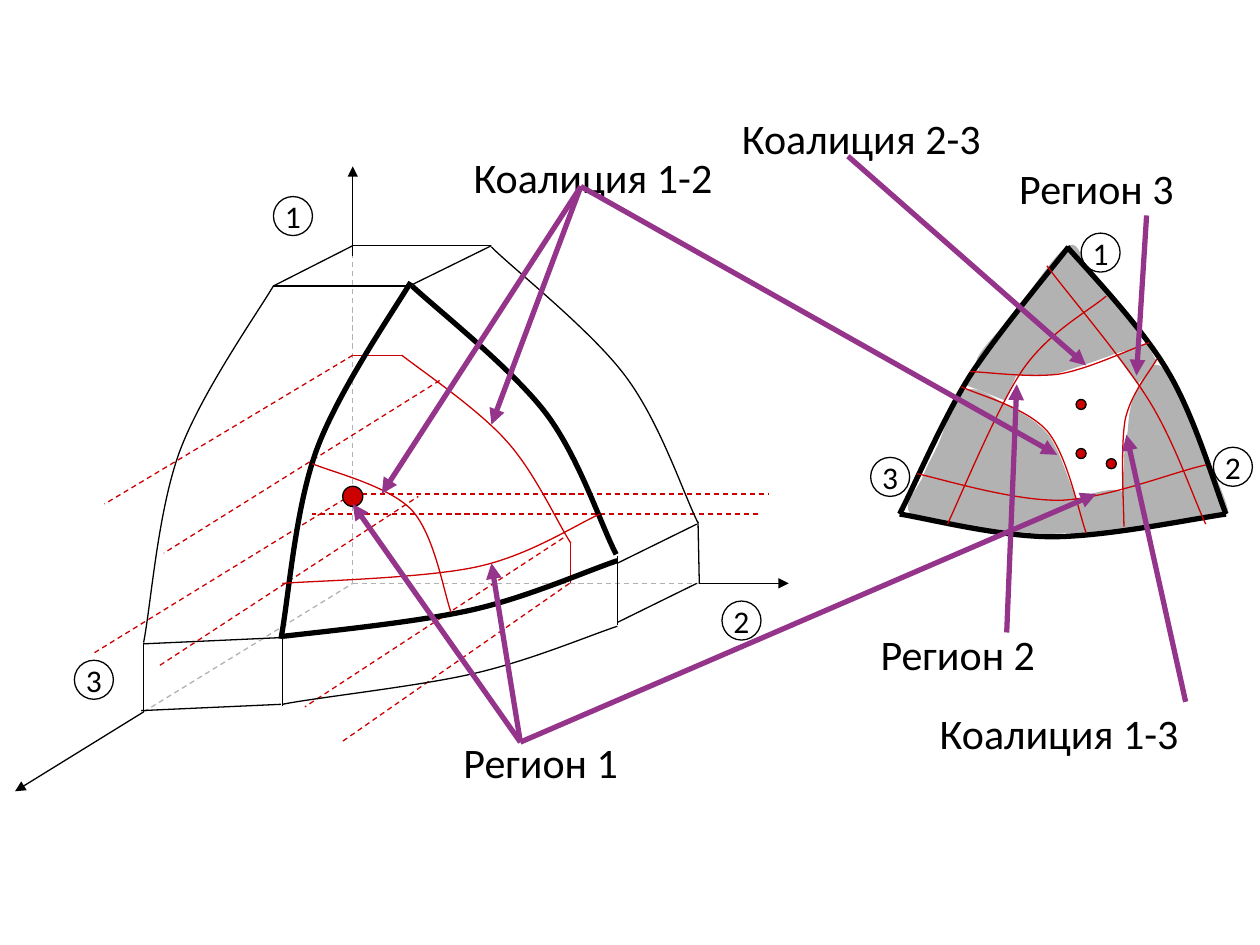
from lxml import etree
from pptx import Presentation
from pptx.dml.color import RGBColor
from pptx.enum.dml import MSO_LINE
from pptx.enum.shapes import MSO_CONNECTOR, MSO_SHAPE
from pptx.enum.text import MSO_ANCHOR, PP_ALIGN
from pptx.oxml.ns import qn
from pptx.util import Cm, Pt

DASH = MSO_LINE.DASH
STRAIGHT = MSO_CONNECTOR.STRAIGHT
OVAL = MSO_SHAPE.OVAL
MIDDLE = MSO_ANCHOR.MIDDLE
LEFT, CENTER = PP_ALIGN.LEFT, PP_ALIGN.CENTER
BLACK = RGBColor(0x00, 0x00, 0x00)
GRAY = RGBColor(0xB2, 0xB2, 0xB2)
RED = RGBColor(0xCC, 0x00, 0x00)
PURPLE = RGBColor(0x94, 0x34, 0x8B)
FONT = "Calibri"
THIN, THICK = 0.75, 3

FLAT_AREAS = [
    [(8.86, 2.82), (9.03, 3.05), (9.18, 2.87), (9.1, 2.72)],
    [(7.78, 2.92), (8.08, 2.95), (7.98, 3.18), (7.65, 3.05)],
]
ROUND_AREAS = [
    [(7.75, 2.9), (7.78, 2.98), (8.09, 2.98), (8.22, 2.98), (8.35, 2.99), (8.43, 2.95),
     (8.53, 2.92), (8.63, 2.89), (8.73, 2.85), (8.82, 2.82), (8.9, 2.78), (9.04, 2.78),
     (9.05, 2.72), (9.06, 2.66), (8.95, 2.54), (8.88, 2.45), (8.82, 2.36), (8.72, 2.27),
     (8.65, 2.18), (8.58, 2.1), (8.58, 1.9), (8.48, 1.95), (8.38, 2), (8.17, 2.33),
     (8.05, 2.48), (7.93, 2.64), (7.72, 2.82), (7.75, 2.9)],
    [(9.75, 4.07), (9.74, 3.96), (9.56, 3.59), (9.47, 3.4), (9.38, 3.21), (9.28, 2.94),
     (9.2, 2.9), (9.12, 2.86), (9.04, 3.06), (9, 3.15), (8.96, 3.24), (8.96, 3.33),
     (8.95, 3.42), (8.94, 3.51), (8.92, 3.56), (8.92, 3.68), (8.91, 3.81), (8.89, 4.09),
     (8.92, 4.17), (8.94, 4.25), (9.01, 4.17), (9.07, 4.17), (9.12, 4.17), (9.17, 4.18),
     (9.25, 4.17), (9.33, 4.16), (9.47, 4.12), (9.55, 4.1), (9.63, 4.08), (9.71, 4.07),
     (9.75, 4.07)],
    [(7.65, 3.1), (7.74, 3.05), (7.89, 3.16), (8, 3.22), (8.11, 3.28), (8.23, 3.34),
     (8.32, 3.45), (8.4, 3.56), (8.45, 3.72), (8.5, 3.85), (8.55, 3.98), (8.62, 4.15),
     (8.62, 4.22), (8.61, 4.28), (8.52, 4.23), (8.45, 4.23), (8.38, 4.24), (8.31, 4.24),
     (8.18, 4.23), (8.05, 4.22), (7.83, 4.2), (7.67, 4.17), (7.51, 4.14), (7.27, 4.13),
     (7.22, 4.07), (7.16, 4), (7.3, 3.86), (7.33, 3.77), (7.37, 3.67), (7.4, 3.63),
     (7.45, 3.52), (7.5, 3.41), (7.56, 3.15), (7.65, 3.1)],
    [(8.53, 3.98), (8.48, 4.04), (8.52, 4.2), (8.58, 4.23), (8.69, 4.22), (8.81, 4.21),
     (8.92, 4.2), (8.97, 4.15), (8.96, 3.94), (8.9, 3.9), (8.84, 3.86), (8.59, 3.93),
     (8.53, 3.98)],
]
AXES = [(2.8, 2.03, 2.8, 1.32), (1.14, 5.65, 0.12, 6.28), (5.55, 4.63, 6.26, 4.63)]
HIDDEN_AXES = [(1.14, 5.65, 2.8, 4.63), (2.8, 4.63, 5.55, 4.63), (2.8, 4.63, 2.8, 1.95)]
BODY_EDGES = [
    (3.27, 2.27, 2.17, 2.27), (2.24, 5.06, 1.14, 5.11), (2.17, 2.27, 2.8, 1.95),
    (3.27, 2.26, 3.9, 1.95), (2.8, 1.95, 3.9, 1.95), (1.14, 5.1, 1.14, 5.65),
    (2.24, 5.05, 2.24, 5.6), (2.23, 5.59, 1.12, 5.64), (4.9, 4.47, 5.53, 4.16),
    (5.54, 4.14, 5.55, 4.63), (4.9, 4.94, 5.53, 4.63), (4.9, 4.41, 4.9, 4.96),
]
BODY_CURVES = [
    [(2.17, 2.27), (2.04, 2.49), (1.59, 3.13), (1.42, 3.6), (1.25, 4.08), (1.2, 4.79), (1.14, 5.1)],
    [(3.9, 1.96), (4.07, 2.13), (4.69, 2.62), (4.96, 2.98), (5.24, 3.35), (5.42, 3.91), (5.54, 4.15)],
    [(2.24, 5.59), (2.48, 5.54), (3.3, 5.45), (3.74, 5.35), (4.19, 5.25), (4.66, 5.05), (4.9, 4.97)],
]
FRONT_CURVES = [
    [(3.26, 2.24), (3.13, 2.46), (2.68, 3.11), (2.51, 3.58), (2.34, 4.05), (2.29, 4.76), (2.23, 5.07)],
    [(3.27, 2.27), (3.45, 2.44), (4.07, 2.93), (4.34, 3.29), (4.6, 3.64), (4.77, 4.17), (4.89, 4.4)],
    [(2.25, 5.05), (2.5, 5.02), (3.31, 4.94), (3.75, 4.84), (4.19, 4.74), (4.66, 4.53), (4.9, 4.45)],
    [(8.48, 1.96), (8.35, 2.13), (7.93, 2.63), (7.7, 2.98), (7.48, 3.33), (7.26, 3.85), (7.14, 4.08)],
    [(8.47, 1.96), (8.61, 2.12), (9.06, 2.59), (9.27, 2.95), (9.48, 3.3), (9.64, 3.85), (9.73, 4.08)],
    [(7.14, 4.08), (7.34, 4.11), (7.92, 4.26), (8.35, 4.26), (8.78, 4.26), (9.45, 4.12), (9.73, 4.08)],
]
REGION_CURVES = [
    [(3.19, 2.82), (3.33, 2.93), (3.8, 3.25), (4.02, 3.5), (4.24, 3.74), (4.42, 4.14), (4.53, 4.31)],
    [(2.48, 3.68), (2.61, 3.74), (3.08, 3.85), (3.27, 4.05), (3.45, 4.25), (3.52, 4.69), (3.58, 4.86)],
    [(7.63, 3.07), (7.75, 3.13), (8.14, 3.23), (8.31, 3.42), (8.47, 3.61), (8.56, 4.06), (8.62, 4.23)],
    [(8.92, 4.18), (8.92, 4.04), (8.89, 3.56), (8.93, 3.33), (8.98, 3.11), (9.13, 2.95), (9.18, 2.85)],
    [(7.7, 2.95), (7.82, 2.95), (8.16, 3), (8.4, 2.97), (8.64, 2.93), (8.97, 2.77), (9.12, 2.72)],
    [(2.24, 4.63), (2.5, 4.61), (3.36, 4.59), (3.78, 4.5), (4.2, 4.41), (4.56, 4.17), (4.76, 4.08)],
    [(7.28, 3.76), (7.47, 3.8), (8.05, 3.98), (8.43, 3.97), (8.81, 3.95), (9.33, 3.74), (9.57, 3.69)],
    [(7.52, 4.16), (7.62, 3.95), (7.91, 3.24), (8.12, 2.93), (8.33, 2.63), (8.64, 2.47), (8.78, 2.35)],
    [(8.31, 2.11), (8.44, 2.29), (8.91, 2.84), (9.12, 3.18), (9.33, 3.52), (9.47, 3.95), (9.57, 4.16)],
]
REGION_EDGES = [(3.19, 2.82, 2.8, 2.82), (4.53, 4.31, 4.53, 4.63)]
PROJECTIONS = [
    (2.8, 2.82, 0.83, 4), (4.52, 4.63, 2.71, 5.89), (3.49, 3.02, 1.3, 4.39),
    (4.47, 4.27, 2.42, 5.61), (2.8, 3.92, 0.75, 5.18), (2.8, 3.92, 6.1, 3.92),
    (1.27, 5.28, 3.32, 3.94), (6.02, 4.08, 2.48, 4.08),
]
DOTS = [(8.54, 3.17, 0.08), (8.54, 3.56, 0.08), (8.78, 3.64, 0.08), (2.72, 3.86, 0.16)]
AXIS_MARKS = [
    ("1", 2.17, 1.56), ("3", 0.59, 5.24), ("2", 5.73, 4.77),
    ("1", 8.58, 1.85), ("3", 6.91, 3.63), ("2", 9.63, 3.55),
]
LABELS = [
    ("Коалиция 1-2", 3.66, 1.15, 2.52), ("Коалиция 1-3", 7.36, 5.57, 2.36),
    ("Коалиция 2-3", 5.79, 0.84, 2.36), ("Регион 1", 3.58, 5.8, 1.57),
    ("Регион 2", 6.89, 4.94, 1.57), ("Регион 3", 7.99, 1.24, 1.65),
]
POINTERS = [
    (4.61, 1.48, 3.9, 3.37), (4.61, 1.48, 8.39, 3.61), (4.61, 1.48, 3.03, 3.92),
    (9.41, 5.57, 8.94, 3.45), (6.73, 1.24, 8.62, 2.9), (4.13, 5.89, 2.8, 4),
    (4.13, 5.89, 8.7, 3.92), (4.13, 5.89, 3.9, 4.47), (7.99, 5.02, 8.07, 3.05),
    (9.1, 1.71, 9.02, 2.98),
]


def inch(value):
    """Convert a length in inches by way of centimetres."""
    return Cm(value * 2.54)


def paint(sp, fill=None, line=None, width=THIN):
    """Set the fill and outline of a shape, leaving out what is None."""
    sp.shadow.inherit = False
    for part, color in ((sp.fill, fill), (sp.line.fill, line)):
        if color is None:
            part.background()
        else:
            part.solid()
            part.fore_color.rgb = color
    if line is not None:
        sp.line.width = Pt(width)


def add_outline(s, points, close=False, **style):
    """Draw a freeform through the points."""
    pts = [(inch(x), inch(y)) for x, y in points]
    builder = s.shapes.build_freeform(*pts[0])
    builder.add_line_segments(pts[1:], close=close)
    sp = builder.convert_to_shape()
    paint(sp, **style)
    return sp


def add_curve(s, points, **style):
    """Draw a chain of cubic curves given as start, control, control, end."""
    sp = add_outline(s, points, **style)
    segments = list(sp._element.iter(qn("a:lnTo")))
    for i in range(0, len(segments), 3):
        cubic = etree.Element(qn("a:cubicBezTo"))
        segments[i].addprevious(cubic)
        for segment in segments[i:i + 3]:
            cubic.append(segment[0])
            segment.getparent().remove(segment)


def add_line(s, ends, color, width=THIN, dash=None, arrow=False):
    """Draw a straight connector, dashed or with an arrowhead on request."""
    cxn = s.shapes.add_connector(STRAIGHT, *map(inch, ends))
    cxn.line.color.rgb = color
    cxn.line.width = Pt(width)
    if dash is not None:
        cxn.line.dash_style = dash
    if arrow:
        etree.SubElement(cxn.line._get_or_add_ln(), qn("a:tailEnd"), type="triangle")
    etree.SubElement(cxn._element.spPr, qn("a:effectLst"))


def add_circle(s, x, y, size, fill=None):
    """Draw a circle with a thin black outline."""
    sp = s.shapes.add_shape(OVAL, *map(inch, (x, y, size, size)))
    paint(sp, fill=fill, line=BLACK)
    return sp


def put_text(sp, text, size=24, color=BLACK, align=LEFT):
    """Write one line of text into a shape."""
    p = sp.text_frame.paragraphs[0]
    p.alignment = align
    r = p.add_run()
    r.text = text
    r.font.name = FONT
    r.font.size = Pt(size)
    r.font.color.rgb = color


def add_mark(s, text, x, y):
    """Draw a circled axis number."""
    sp = add_circle(s, x, y, 0.31)
    tf = sp.text_frame
    tf.margin_left = tf.margin_right = tf.margin_top = tf.margin_bottom = 0
    tf.vertical_anchor = MIDDLE
    tf.word_wrap = False
    put_text(sp, text, size=18, align=CENTER)


def add_label(s, text, x, y, w):
    """Place a label in a text box."""
    sp = s.shapes.add_textbox(*map(inch, (x, y, w, 0.5)))
    sp.text_frame.word_wrap = True
    put_text(sp, text)


def main():
    """Build the slide and save it."""
    prs = Presentation()
    prs.slide_width, prs.slide_height = inch(10), inch(7.5)
    s = prs.slides.add_slide(prs.slide_layouts[6])
    for points in FLAT_AREAS:
        add_outline(s, points, close=True, fill=GRAY)
    for points in ROUND_AREAS:
        add_curve(s, points, close=True, fill=GRAY)
    for group, style in ((HIDDEN_AXES, {"color": GRAY, "dash": DASH}),
                         (AXES, {"color": BLACK, "arrow": True}),
                         (BODY_EDGES, {"color": BLACK}),
                         (REGION_EDGES, {"color": RED}),
                         (PROJECTIONS, {"color": RED, "dash": DASH})):
        for ends in group:
            add_line(s, ends, **style)
    for group, color, width in ((BODY_CURVES, BLACK, THIN), (FRONT_CURVES, BLACK, THICK),
                                (REGION_CURVES, RED, THIN)):
        for points in group:
            add_curve(s, points, line=color, width=width)
    for x, y, size in DOTS:
        add_circle(s, x, y, size, fill=RED)
    for mark in AXIS_MARKS:
        add_mark(s, *mark)
    for label in LABELS:
        add_label(s, *label)
    for ends in POINTERS:
        add_line(s, ends, PURPLE, width=THICK, arrow=True)
    prs.save("out.pptx")


if __name__ == "__main__":
    main()
